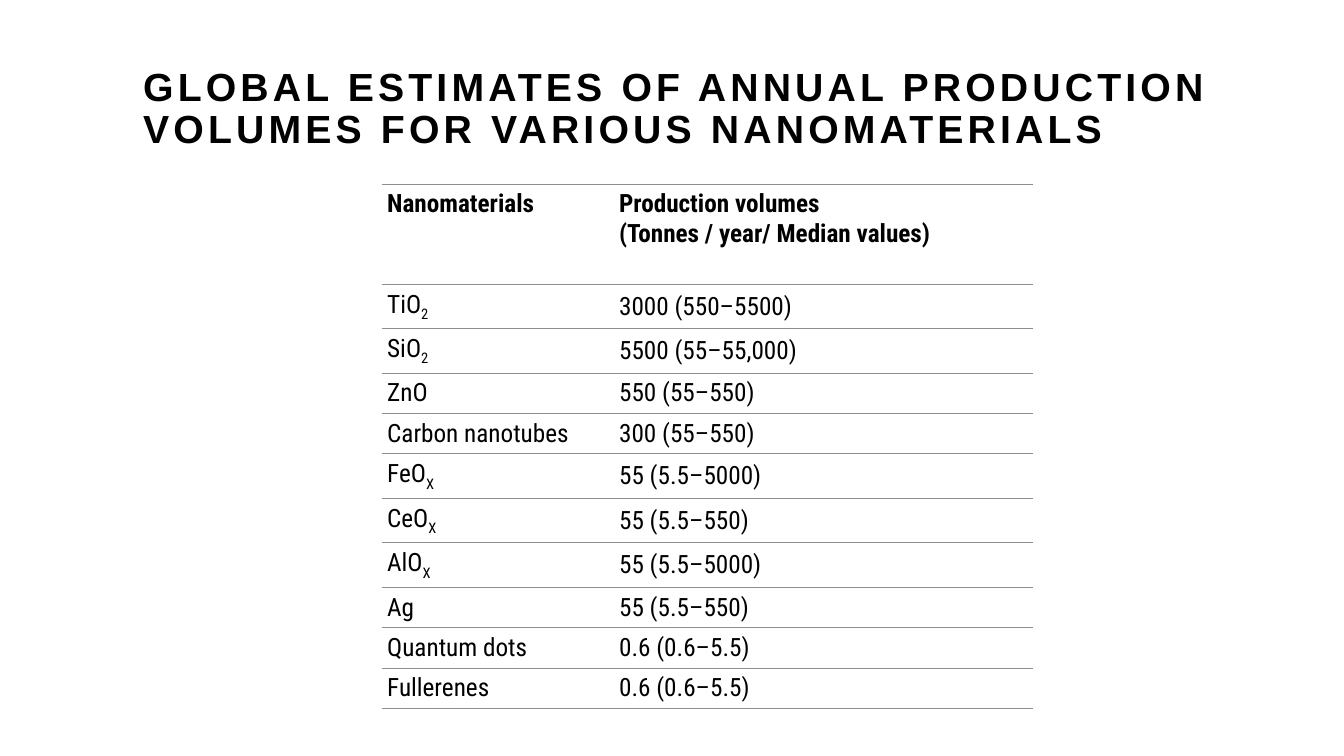
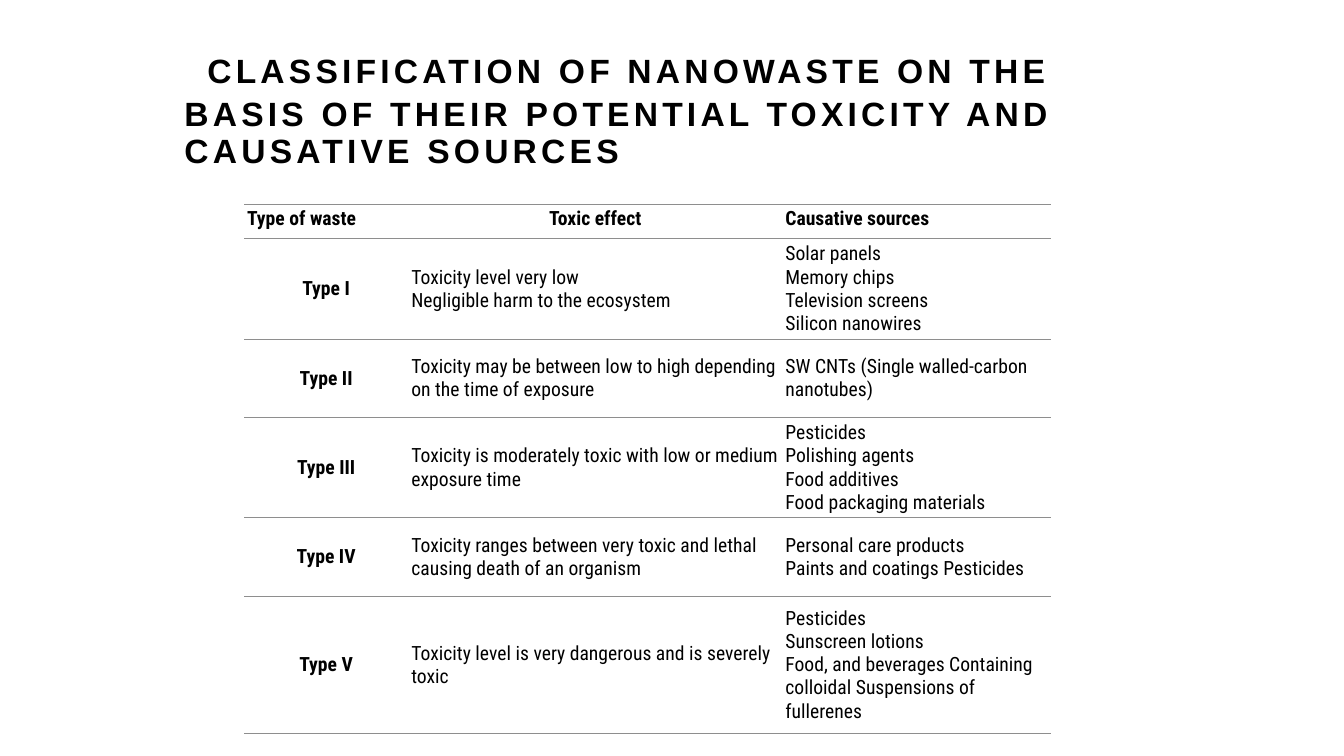
from lxml import etree
from pptx import Presentation
from pptx.dml.color import RGBColor
from pptx.enum.text import MSO_ANCHOR, PP_ALIGN
from pptx.oxml.ns import qn
from pptx.util import Inches, Pt

LEFT, CENTER = PP_ALIGN.LEFT, PP_ALIGN.CENTER
TOP, MIDDLE = MSO_ANCHOR.TOP, MSO_ANCHOR.MIDDLE
BLACK = RGBColor(0x00, 0x00, 0x00)
RULE_GRAY = RGBColor(0x8E, 0x8E, 0x8E)
TITLE_FONT, TABLE_FONT = "Arial", "Roboto Condensed"
TITLE_TRACKING = 300  # hundredths of a point
RULE_WIDTH = Pt(0.75)

# Content: title runs are (text, size, bold); "_" starts a subscript
SLIDES = [
    {
        "title": [("GLOBAL ESTIMATES OF ANNUAL PRODUCTION VOLUMES "
                   "FOR VARIOUS NANOMATERIALS", 28, True)],
        "title_box": (1.42, 0.67, 10.74, 1.37),
        "table_at": (3.79, 1.83),
        "columns": [2.3, 4.16],
        "row_heights": [0.99] + [0.4] * 10,
        "size": 18,
        "margin": 0.05,
        "header_align": [LEFT, LEFT],
        "body_align": [LEFT, LEFT],
        "bold_first_column": False,
        "rows": [
            ("Nanomaterials", "Production volumes\n(Tonnes / year/ Median values)"),
            ("TiO_2", "3000 (550–5500)"),
            ("SiO_2", "5500 (55–55,000)"),
            ("ZnO", "550 (55–550)"),
            ("Carbon nanotubes", "300 (55–550)"),
            ("FeO_X", "55 (5.5–5000)"),
            ("CeO_X", "55 (5.5–550)"),
            ("AlO_X", "55 (5.5–5000)"),
            ("Ag", "55 (5.5–550)"),
            ("Quantum dots", "0.6 (0.6–5.5)"),
            ("Fullerenes", "0.6 (0.6–5.5)"),
        ],
    },
    {
        "title": [(" ", 48, False),
                  ("CLASSIFICATION OF NANOWASTE ON THE BASIS OF THEIR "
                   "POTENTIAL TOXICITY AND CAUSATIVE SOURCES", 24, True)],
        "title_box": (1.83, 0.25, 9.67, 1.25),
        "table_at": (2.42, 2.03),
        "columns": [1.63, 3.71, 2.66],
        "row_heights": [0.34, 0.92, 0.78, 0.78, 0.78, 1.36],
        "size": 14,
        "margin": 0.03,
        "header_align": [LEFT, CENTER, LEFT],
        "body_align": [CENTER, LEFT, LEFT],
        "bold_first_column": True,
        "rows": [
            ("Type of waste", "Toxic effect", "Causative sources"),
            ("Type I",
             "Toxicity level very low\nNegligible harm to the ecosystem",
             "Solar panels\nMemory chips\nTelevision screens\nSilicon nanowires"),
            ("Type II",
             "Toxicity may be between low to high depending on the time of exposure",
             "SW CNTs (Single walled‑carbon nanotubes)"),
            ("Type III",
             "Toxicity is moderately toxic with low or medium exposure time",
             "Pesticides\nPolishing agents\nFood additives\nFood packaging materials"),
            ("Type IV",
             "Toxicity ranges between very toxic and lethal causing death of an organism",
             "Personal care products\nPaints and coatings Pesticides"),
            ("Type V",
             "Toxicity level is very dangerous and is severely toxic",
             "Pesticides\nSunscreen lotions\nFood, and beverages Containing "
             "colloidal Suspensions of fullerenes"),
        ],
    },
]


def add_run(paragraph, text, font_name, size, bold, **attributes):
    run = paragraph.add_run()
    run.text = text
    for key, value in {"name": font_name, "size": Pt(size), "bold": bold}.items():
        setattr(run.font, key, value)
    run.font.color.rgb = BLACK
    for key, value in attributes.items():
        run.font._element.set(key, str(value))


def set_margins(target, margin):
    for side in ("left", "top", "right", "bottom"):
        setattr(target, f"margin_{side}", Inches(margin))


def add_title(slide, content):
    frame = slide.shapes.add_textbox(*map(Inches, content["title_box"])).text_frame
    frame.word_wrap = True
    frame.vertical_anchor = TOP
    set_margins(frame, 0)
    paragraph = frame.paragraphs[0]
    paragraph.line_spacing = 0.9
    for text, size, bold in content["title"]:
        add_run(paragraph, text, TITLE_FONT, size, bold, spc=TITLE_TRACKING)


def rule_cell(cell):
    """Gray rules above and below, none at the sides, no fill."""
    properties = cell._tc.get_or_add_tcPr()
    for side in ("lnL", "lnR", "lnT", "lnB"):
        line = etree.SubElement(properties, qn(f"a:{side}"), w=str(int(RULE_WIDTH)))
        if side in ("lnT", "lnB"):
            fill = etree.SubElement(line, qn("a:solidFill"))
            etree.SubElement(fill, qn("a:srgbClr"), val=str(RULE_GRAY))
        else:
            etree.SubElement(line, qn("a:noFill"))
    cell.fill.background()


def fill_cell(cell, text, content, align, bold, anchor):
    set_margins(cell, content["margin"])
    cell.vertical_anchor = anchor
    frame = cell.text_frame
    for index, line in enumerate(text.split("\n")):
        paragraph = frame.add_paragraph() if index else frame.paragraphs[0]
        paragraph.alignment = align
        base, _, subscript = line.partition("_")
        add_run(paragraph, base, TABLE_FONT, content["size"], bold)
        if subscript:
            add_run(paragraph, subscript, TABLE_FONT, content["size"], bold,
                    baseline=-25000)
    rule_cell(cell)


def add_ruled_table(slide, content):
    rows, columns = content["rows"], content["columns"]
    heights = content["row_heights"]
    table = slide.shapes.add_table(
        len(rows), len(columns), *map(Inches, content["table_at"]),
        Inches(sum(columns)), Inches(sum(heights))).table
    table.first_row = table.horz_banding = False
    for column, width in zip(table.columns, columns):
        column.width = Inches(width)
    for row, height in zip(table.rows, heights):
        row.height = Inches(height)
    for r, row in enumerate(rows):
        header = r == 0
        aligns = content["header_align" if header else "body_align"]
        for c, text in enumerate(row):
            bold = header or (c == 0 and content["bold_first_column"])
            fill_cell(table.cell(r, c), text, content, aligns[c], bold,
                      TOP if header else MIDDLE)


def main():
    presentation = Presentation()
    presentation.slide_width = Inches(13.33)
    presentation.slide_height = Inches(7.5)
    blank = presentation.slide_layouts[6]
    for content in SLIDES:
        slide = presentation.slides.add_slide(blank)
        add_title(slide, content)
        add_ruled_table(slide, content)
    presentation.save("out.pptx")


if __name__ == "__main__":
    main()
